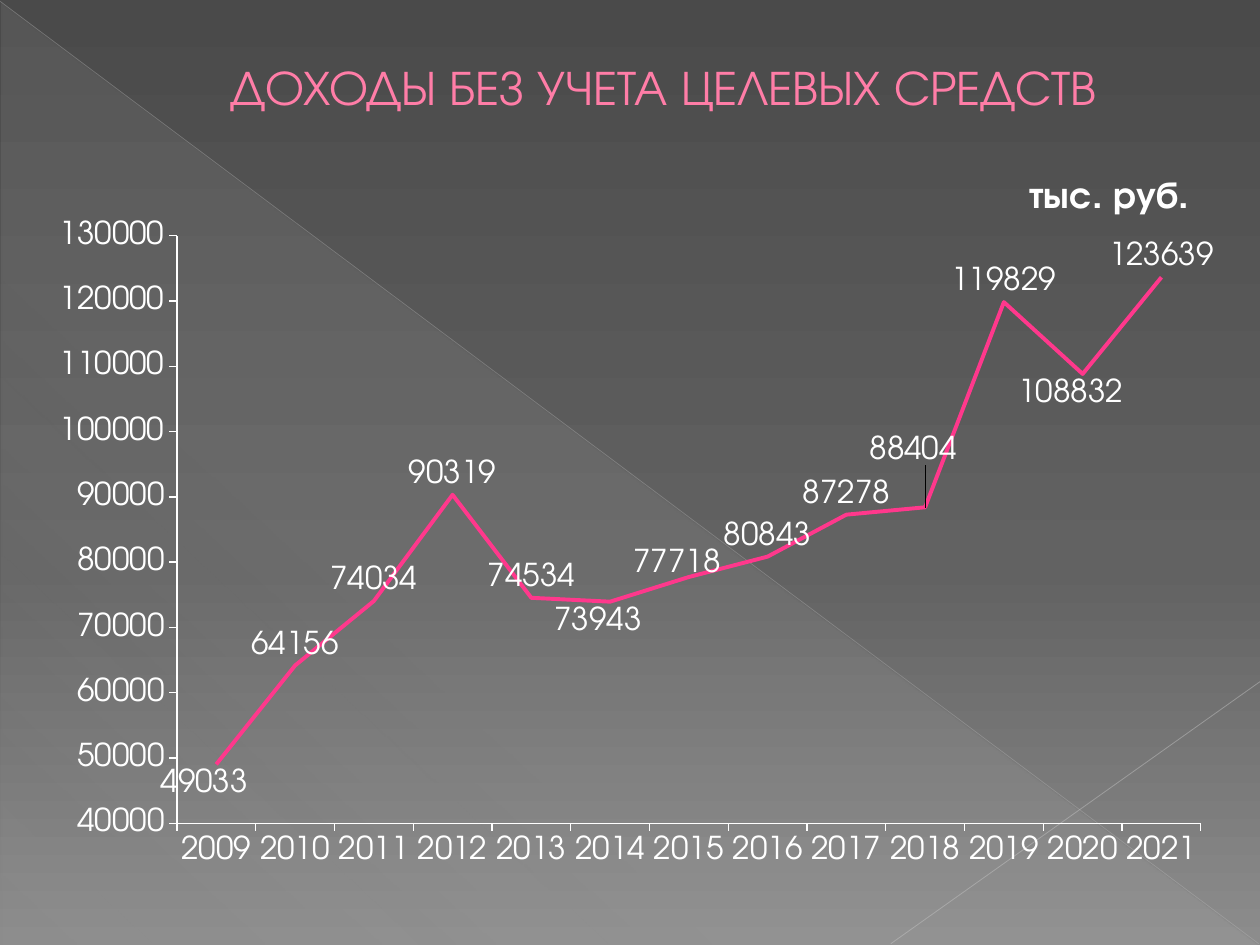
import pptx
import pptx.chart.data
import pptx.dml.color
import pptx.enum.chart
import pptx.enum.shapes
import pptx.enum.text
import pptx.oxml
import pptx.oxml.ns
import pptx.util
from lxml import etree

Inches = pptx.util.Inches
Pt = pptx.util.Pt
RGBColor = pptx.dml.color.RGBColor
qn = pptx.oxml.ns.qn
LabelPosition = pptx.enum.chart.XL_LABEL_POSITION

WHITE = RGBColor(0xFF, 0xFF, 0xFF)
TITLE_PINK = RGBColor(0xFF, 0x7D, 0xA7)
LINE_PINK = RGBColor(0xFF, 0x38, 0x8C)
LONG_RAY = RGBColor(0xBF, 0xBF, 0xBF)
SHORT_RAY = RGBColor(0xC6, 0xC6, 0xC6)
HAZE = RGBColor(0xD2, 0xD2, 0xD2)
BACKDROP = [
    (0, RGBColor(0x4A, 0x4A, 0x4A), 100),
    (60, RGBColor(0x62, 0x62, 0x62), 100),
    (100, RGBColor(0x8C, 0x8C, 0x8C), 100),
]
FONT = "TeX Gyre Adventor"

YEARS = [str(year) for year in range(2009, 2022)]
INCOME = [49033, 64156, 74034, 90319, 74534, 73943, 77718,
          80843, 87278, 88404, 119829, 108832, 123639]
MOVED_LABELS = {
    "2009": (LabelPosition.BELOW, -0.01, 0),
    "2014": (LabelPosition.BELOW, -0.01, 0),
    "2015": (LabelPosition.ABOVE, -0.01, 0.01),
    "2018": (LabelPosition.ABOVE, -0.01, -0.05),
    "2020": (LabelPosition.BELOW, -0.01, 0),
}


class IncomeSlide:
    def __init__(self, slide):
        self.slide = slide

    def style_font(self, font, size, color):
        font.name = FONT
        font.size = Pt(size)
        font.color.rgb = color

    def set_opacity(self, color_element, opacity):
        if opacity < 100:
            alpha = etree.SubElement(color_element, qn("a:alpha"))
            alpha.set("val", str(opacity * 1000))

    def gradient(self, fill, owner, stops, angle):
        fill.gradient()
        gradient = next(owner.iter(qn("a:gradFill")))
        stop_list = gradient.find(qn("a:gsLst"))
        for old_stop in list(stop_list):
            stop_list.remove(old_stop)
        for position, color, opacity in stops:
            stop = etree.SubElement(stop_list, qn("a:gs"), pos=str(position * 1000))
            shade = etree.SubElement(stop, qn("a:srgbClr"), val=str(color))
            self.set_opacity(shade, opacity)
        gradient.find(qn("a:lin")).set("ang", str(angle * 60000))

    def background(self, stops):
        self.gradient(self.slide.background.fill, self.slide.element, stops, 90)

    def triangle(self, left, top, width, height, stops, angle):
        triangle = self.slide.shapes.add_shape(
            pptx.enum.shapes.MSO_SHAPE.RIGHT_TRIANGLE,
            Inches(left), Inches(top), Inches(width), Inches(height))
        triangle.shadow.inherit = False
        triangle.line.fill.background()
        self.gradient(triangle.fill, triangle.element, stops, angle)

    def ray(self, start, end, color, width, opacity):
        ray = self.slide.shapes.add_connector(
            pptx.enum.shapes.MSO_CONNECTOR.STRAIGHT,
            *map(Inches, (*start, *end)))
        ray.line.color.rgb = color
        ray.line.width = Pt(width)
        self.set_opacity(next(ray.element.iter(qn("a:srgbClr"))), opacity)
        etree.SubElement(ray.element.spPr, qn("a:effectLst"))

    def heading(self, text, left, top, width, height, indent):
        frame = self.slide.shapes.add_textbox(
            Inches(left), Inches(top), Inches(width), Inches(height)).text_frame
        frame.word_wrap = True
        frame.vertical_anchor = pptx.enum.text.MSO_ANCHOR.MIDDLE
        paragraph = frame.paragraphs[0]
        paragraph.text = text
        paragraph.alignment = pptx.enum.text.PP_ALIGN.CENTER
        paragraph._p.get_or_add_pPr().set("marL", str(Inches(indent)))
        self.style_font(paragraph.font, 28, TITLE_PINK)

    def manual_layout(self, **settings):
        layout = etree.Element(qn("c:layout"))
        manual = etree.SubElement(layout, qn("c:manualLayout"))
        for name, value in settings.items():
            etree.SubElement(manual, qn("c:" + name), val=str(value))
        return layout

    def style_axis(self, axis):
        axis.has_major_gridlines = False
        axis.major_tick_mark = pptx.enum.chart.XL_TICK_MARK.OUTSIDE
        axis.minor_tick_mark = pptx.enum.chart.XL_TICK_MARK.NONE
        axis.format.line.color.rgb = WHITE
        axis.format.line.width = Pt(0.75)
        self.style_font(axis.tick_labels.font, 18, WHITE)

    def title_chart(self, chart, text):
        chart.has_title = True
        paragraph = chart.chart_title.text_frame.paragraphs[0]
        paragraph.text = text
        self.style_font(paragraph.font, 21.6, WHITE)
        paragraph.font.bold = True
        title = chart.chart_title._element
        for old_layout in title.findall(qn("c:layout")):
            title.remove(old_layout)
        title.find(qn("c:tx")).addnext(self.manual_layout(
            xMode="edge", yMode="edge", x=0.83, y=0.02))
        chart.chart_title.include_in_layout = False

    def label_points(self, series):
        labels = series.data_labels
        labels.show_value = True
        labels.position = LabelPosition.ABOVE
        self.style_font(labels.font, 18, WHITE)
        for year, (position, shift_x, shift_y) in MOVED_LABELS.items():
            index = YEARS.index(year)
            label = series.points[index].data_label
            self.style_font(label.font, 18, WHITE)
            label.position = position
            for marker in labels._element.iter(qn("c:idx")):
                if marker.get("val") == str(index):
                    marker.addnext(self.manual_layout(x=shift_x, y=shift_y))

    def line_chart(self, left, top, width, height):
        data = pptx.chart.data.CategoryChartData()
        data.categories = YEARS
        data.add_series("Series 1", INCOME)
        chart = self.slide.shapes.add_chart(
            pptx.enum.chart.XL_CHART_TYPE.LINE,
            Inches(left), Inches(top), Inches(width), Inches(height), data).chart
        chart.has_legend = False
        self.style_font(chart.font, 18, WHITE)
        self.title_chart(chart, "тыс. руб.")
        self.style_axis(chart.category_axis)
        self.style_axis(chart.value_axis)
        chart.value_axis.minimum_scale = 40000
        chart.value_axis.maximum_scale = 130000
        chart.value_axis.major_unit = 10000
        plot_area = next(chart.element.iter(qn("c:plotArea")))
        for old_layout in plot_area.findall(qn("c:layout")):
            plot_area.remove(old_layout)
        plot_area.insert(0, self.manual_layout(
            layoutTarget="inner", xMode="edge", yMode="edge",
            x=0.12, y=0.11, w=0.86, h=0.8))
        chart.plots[0].vary_by_categories = False
        series = chart.plots[0].series[0]
        series.smooth = False
        series.marker.style = pptx.enum.chart.XL_MARKER_STYLE.NONE
        series.format.line.color.rgb = LINE_PINK
        series.format.line.width = Pt(2.25)
        self.label_points(series)


def main():
    presentation = pptx.Presentation()
    presentation.slide_width = Inches(10)
    presentation.slide_height = Inches(7.5)
    page = IncomeSlide(presentation.slides.add_slide(presentation.slide_layouts[6]))
    page.background(BACKDROP)
    page.triangle(0.01, 0.02, 9.98, 7.48,
                  [(0, HAZE, 10), (70, HAZE, 8), (100, HAZE, 1)], 133)
    page.ray((0, 0.01), (9.99, 7.49), LONG_RAY, 0.39, 35)
    page.ray((10, 5.41), (7.07, 7.49), SHORT_RAY, 0.47, 45)
    page.heading("ДОХОДЫ БЕЗ УЧЕТА ЦЕЛЕВЫХ СРЕДСТВ", 0.5, 0.29, 9, 0.78, 0.53)
    page.line_chart(0.27, 1.23, 9.45, 5.83)
    presentation.save("out.pptx")


if __name__ == "__main__":
    main()
